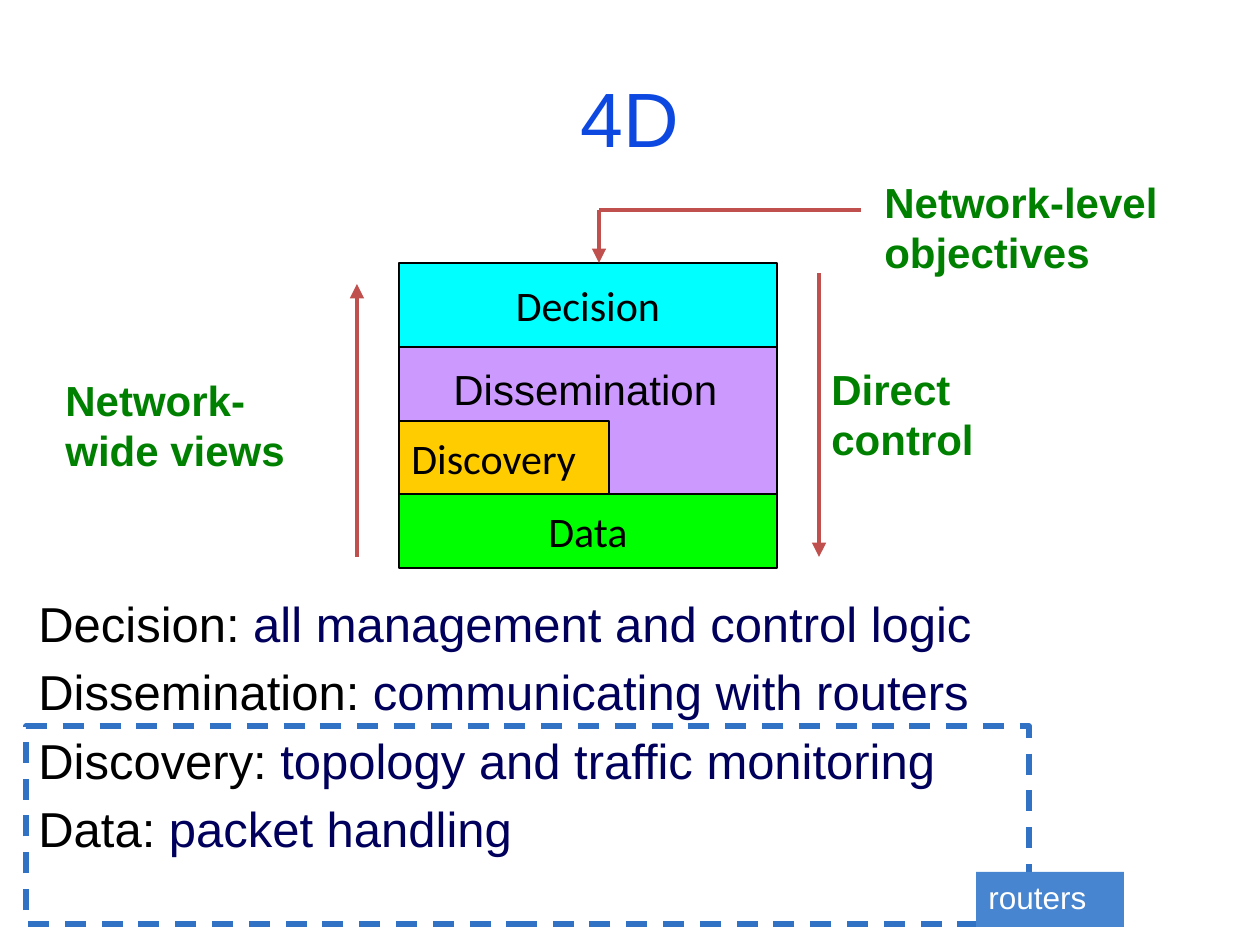
from lxml import etree
from pptx import Presentation
from pptx.dml.color import RGBColor
from pptx.enum.dml import MSO_LINE
from pptx.enum.shapes import MSO_CONNECTOR, MSO_SHAPE
from pptx.enum.text import MSO_ANCHOR, PP_ALIGN
from pptx.oxml.ns import qn
from pptx.util import Pt

RECTANGLE = MSO_SHAPE.RECTANGLE
STRAIGHT = MSO_CONNECTOR.STRAIGHT
DASH = MSO_LINE.DASH
TOP, MIDDLE = MSO_ANCHOR.TOP, MSO_ANCHOR.MIDDLE
LEFT, CENTER = PP_ALIGN.LEFT, PP_ALIGN.CENTER

BLACK = RGBColor(0x00, 0x00, 0x00)
WHITE = RGBColor(0xFF, 0xFF, 0xFF)
TITLE_BLUE = RGBColor(0x0D, 0x49, 0xE1)
NAVY = RGBColor(0x00, 0x00, 0x5C)
FRAME_BLUE = RGBColor(0x31, 0x72, 0xC4)
TAG_BLUE = RGBColor(0x47, 0x85, 0xD1)
CYAN = RGBColor(0x00, 0xFF, 0xFF)
PURPLE = RGBColor(0xCC, 0x99, 0xFF)
ORANGE = RGBColor(0xFF, 0xCC, 0x00)
LIME = RGBColor(0x00, 0xFF, 0x00)
GREEN = RGBColor(0x00, 0x80, 0x00)
RED = RGBColor(0xC0, 0x50, 0x4D)

# Content: boxes are left, top, width, height in px
PLANES = [
    ("Decision", "all management and control logic"),
    ("Dissemination", "communicating with routers"),
    ("Discovery", "topology and traffic monitoring"),
    ("Data", "packet handling"),
]
STACK_LEFT, STACK_TOP, STACK_WIDTH = 399, 263, 378
LAYERS = [  # text, fill, height, width, alignment, offset from layer above
    ("Decision", CYAN, 84, STACK_WIDTH, CENTER, 0),
    ("", PURPLE, 147, STACK_WIDTH, CENTER, 84),
    ("Discovery", ORANGE, 73, 210, LEFT, 74),
    ("Data", LIME, 74, STACK_WIDTH, CENTER, 73),
]
LABELS = [
    ("Network-level objectives", (872, 170, 315, 113)),
    ("Direct control", (819, 357, 210, 113)),
    ("Network-wide views", (53, 368, 294, 113)),
]
LINES = [  # start, end, arrowhead at the end
    ((357, 557), (357, 284), True),
    ((819, 273), (819, 557), True),
    ((599, 210), (599, 263), True),
    ((599, 210), (861, 210), False),
]

PX = 914400 / 126


def px(*lengths):
    return [round(length * PX) for length in lengths]


presentation = Presentation()
presentation.slide_width, presentation.slide_height = px(1260, 945)
slide = presentation.slides.add_slide(presentation.slide_layouts[6])


def write(shape, paragraphs, size, color=BLACK, font="Arial", bold=False,
          align=LEFT, anchor=TOP, before=0, line_height=None):
    """Each paragraph is a list of (text, colour) runs, or plain text."""
    frame = shape.text_frame
    frame.word_wrap = True
    frame.vertical_anchor = anchor
    for index, runs in enumerate(paragraphs):
        paragraph = frame.add_paragraph() if index else frame.paragraphs[0]
        paragraph.alignment = align
        paragraph.space_before = Pt(before)
        if line_height:
            paragraph.line_spacing = Pt(line_height)
        for text, run_color in [(runs, color)] if isinstance(runs, str) else runs:
            run = paragraph.add_run()
            run.text = text
            run.font.name, run.font.size, run.font.bold = font, Pt(size), bold
            run.font.color.rgb = run_color


def add_text(box, paragraphs, size, **text_format):
    write(slide.shapes.add_textbox(*px(*box)), paragraphs, size, **text_format)


def add_box(box, fill=None, line=None, width=0.75):
    shape = slide.shapes.add_shape(RECTANGLE, *px(*box))
    shape.shadow.inherit = False
    if fill is None:
        shape.fill.background()
    else:
        shape.fill.solid()
        shape.fill.fore_color.rgb = fill
    if line is None:
        shape.line.fill.background()
    else:
        shape.line.color.rgb = line
        shape.line.width = Pt(width)
    return shape


def add_line(start, end, arrow):
    connector = slide.shapes.add_connector(STRAIGHT, *px(*start, *end))
    connector.line.color.rgb = RED
    connector.line.width = Pt(2.75)
    if arrow:
        etree.SubElement(connector.line._get_or_add_ln(), qn("a:tailEnd"), type="triangle")
    etree.SubElement(connector._element.spPr, qn("a:effectLst"))


# Title and plane descriptions
add_text((63, 38, 1134, 157), ["4D"], 44, color=TITLE_BLUE, align=CENTER, anchor=MIDDLE)
add_text((26, 587, 1193, 357),
         [[(name + ": ", BLACK), (role, NAVY)] for name, role in PLANES],
         28, before=5.6, line_height=33.6)

# Dashed frame around the planes that live in routers
add_box((26, 726, 1003, 198), line=FRAME_BLUE, width=3).line.dash_style = DASH
write(add_box((976, 872, 148, 55), fill=TAG_BLUE), ["routers"], 18, color=WHITE)

# Layer stack
top = STACK_TOP
for text, fill, height, width, align, offset in LAYERS:
    top += offset
    layer = add_box((STACK_LEFT, top, width, height), fill=fill, line=BLACK)
    if text:
        write(layer, [text], 24, font="Calibri", align=align, anchor=MIDDLE)
    else:
        add_text((441, 357, 325, 63), ["Dissemination"], 24)

# Arrows and their labels
for start, end, arrow in LINES:
    add_line(start, end, arrow)
for text, box in LABELS:
    add_text(box, [text], 24, color=GREEN, bold=True, line_height=28.8)

presentation.save("out.pptx")
